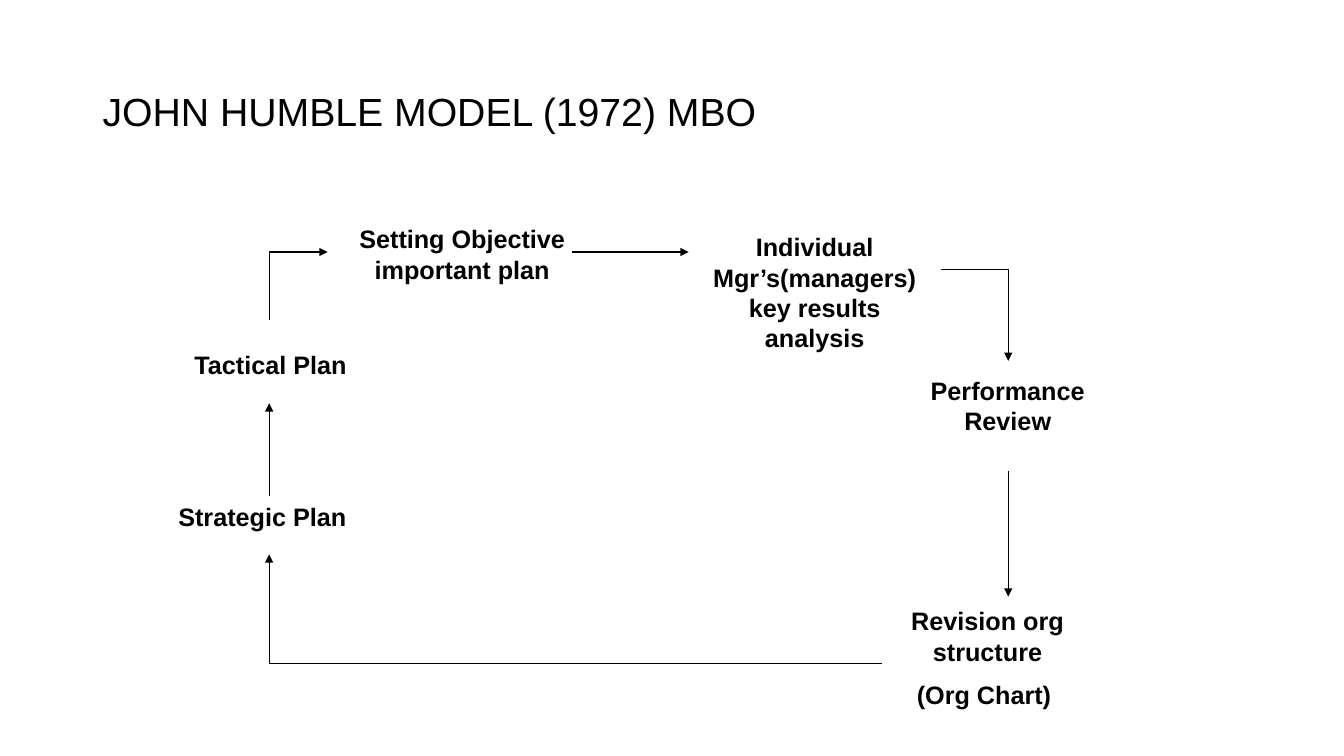
from dataclasses import dataclass
from itertools import pairwise

from lxml import etree
from pptx import Presentation
from pptx.dml.color import RGBColor
from pptx.enum.shapes import MSO_CONNECTOR
from pptx.enum.text import MSO_ANCHOR, PP_ALIGN
from pptx.oxml.ns import qn
from pptx.util import Inches, Pt

STRAIGHT = MSO_CONNECTOR.STRAIGHT
TOP, MIDDLE = MSO_ANCHOR.TOP, MSO_ANCHOR.MIDDLE
LEFT, CENTER = PP_ALIGN.LEFT, PP_ALIGN.CENTER


@dataclass(frozen=True)
class Theme:
    font: str = "Arial"
    ink: RGBColor = RGBColor(0, 0, 0)
    title: int = 28
    step: int = 18
    gap: int = 9
    line: float = 0.75


THEME = Theme()

# Box relative to the diagram, alignment, text
STEPS = [
    ((1.75, 0, 2.33, 0.7), CENTER, "Setting Objective important plan"),
    ((5.16, 0.08, 2.5, 1.31), CENTER, "Individual Mgr’s(managers) key results analysis"),
    ((7.41, 1.5, 1.83, 0.7), CENTER, "Performance Review"),
    ((6.79, 3.79, 2.67, 1.15), CENTER, "Revision org structure\n(Org Chart) "),
    ((0, 2.75, 2.08, 0.4), LEFT, "Strategic Plan"),
    ((0.16, 1.25, 1.92, 0.4), LEFT, "Tactical Plan"),
]

# Corner points of each arrow; the head is on the last point
LEFT_X, RIGHT_X, TOP_Y = 1, 8.33, 0.33
ARROWS = [
    [(4, TOP_Y), (5.16, TOP_Y)],
    [(7.66, 0.5), (RIGHT_X, 0.5), (RIGHT_X, 1.41)],
    [(RIGHT_X, 2.5), (RIGHT_X, 3.75)],
    [(7.08, 4.41), (LEFT_X, 4.41), (LEFT_X, 3.33)],
    [(LEFT_X, 2.75), (LEFT_X, 1.83)],
    [(LEFT_X, 1), (LEFT_X, TOP_Y), (1.58, TOP_Y)],
]


def add_text(s, text, x, y, w, h, size, bold=False, align=LEFT,
             anchor=TOP, spacing=1.0):
    tf = s.shapes.add_textbox(Inches(x), Inches(y), Inches(w), Inches(h)).text_frame
    tf.word_wrap = True
    tf.vertical_anchor = anchor
    for i, line in enumerate(text.split("\n")):
        p = tf.add_paragraph() if i else tf.paragraphs[0]
        p.alignment = align
        p.line_spacing = spacing
        p.space_before = Pt(THEME.gap if i else 0)
        r = p.add_run()
        r.text = line
        r.font.name = THEME.font
        r.font.size = Pt(size)
        r.font.bold = bold
        r.font.color.rgb = THEME.ink


def add_arrow(s, points, x, y):
    """Join the points with straight lines and put a head on the last one."""
    for (x1, y1), (x2, y2) in pairwise(points):
        line = s.shapes.add_connector(STRAIGHT, Inches(x + x1), Inches(y + y1),
                                      Inches(x + x2), Inches(y + y2))
        line.line.color.rgb = THEME.ink
        line.line.width = Pt(THEME.line)
        etree.SubElement(line._element.spPr, qn("a:effectLst"))
    etree.SubElement(line.line._get_or_add_ln(), qn("a:tailEnd"), type="triangle")


def add_title(s, x, y, w, h):
    add_text(s, "JOHN HUMBLE MODEL (1972) MBO", x, y, w, h, THEME.title,
             anchor=MIDDLE, spacing=0.9)


def add_cycle(s, x, y):
    for (dx, dy, w, h), align, text in STEPS:
        add_text(s, text, x + dx, y + dy, w, h, THEME.step, bold=True, align=align)
    for points in ARROWS:
        add_arrow(s, points, x, y)


def main():
    prs = Presentation()
    prs.slide_width, prs.slide_height = Inches(13.33), Inches(7.5)
    s = prs.slides.add_slide(prs.slide_layouts[6])
    add_title(s, 0.92, 0.4, 11.5, 1.45)
    add_cycle(s, 1.67, 2.17)
    prs.save("out.pptx")


if __name__ == "__main__":
    main()
